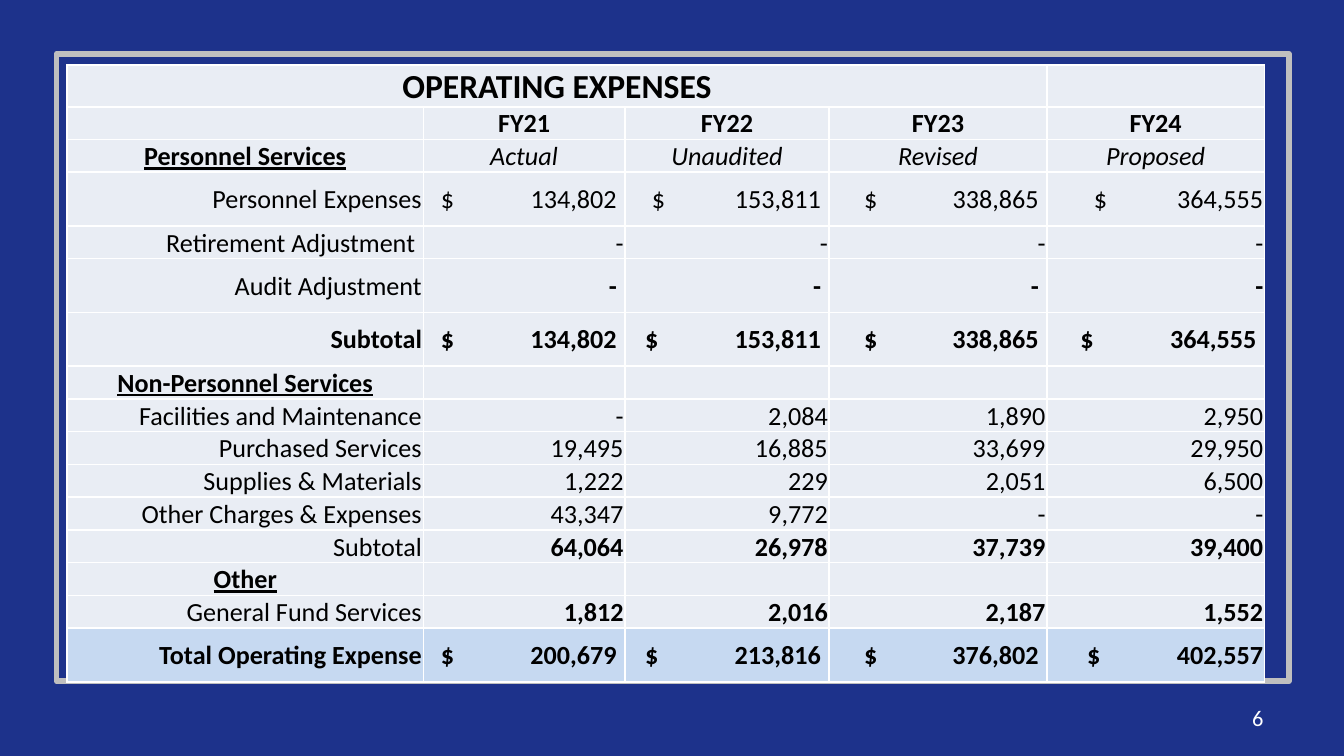
from lxml.etree import SubElement
from pptx import Presentation
from pptx.dml.color import RGBColor
from pptx.enum.shapes import MSO_SHAPE
from pptx.enum.text import MSO_ANCHOR, PP_ALIGN
from pptx.oxml.ns import qn
from pptx.util import Inches, Pt

COLORS = {"navy": "1D328B", "frame": "BFBFBF", "white": "FFFFFF",
          "black": "000000", "body": "E9EDF4", "total": "C6D9F1"}
FONT = "Calibri"
COLUMNS = [26.5, 15, 15.2, 16.2, 16.2]  # percent of the slide's width
HEADER, LOW, TALL = 5.51, 4.27, 7.11  # percent of the slide's height
EDGE, INSET = 0.01, 0.06  # gap in inches to the right of a figure

HEADING = {"bold": True, "underline": True, "align": PP_ALIGN.CENTER}
YEAR = {"bold": True, "align": PP_ALIGN.CENTER}
STATUS = {"italic": True, "align": PP_ALIGN.CENTER}
PLAIN, BOLD = {}, {"bold": True}
BLANK = [""] * 4
INSET_THREE = [INSET] * 3 + [EDGE]

# label, label format, figures, figure format, row height
ROWS = [
    ("OPERATING EXPENSES", {**YEAR, "size": 18}, BLANK, PLAIN, HEADER),
    ("", PLAIN, ["FY21", "FY22", "FY23", "FY24"], YEAR, LOW),
    ("Personnel Services", HEADING,
     ["Actual", "Unaudited", "Revised", "Proposed"], STATUS, LOW),
    ("Personnel Expenses", PLAIN,
     ["$\t134,802", "$\t153,811", "$\t338,865", "$\t364,555"], PLAIN, TALL),
    ("Retirement Adjustment", PLAIN, ["-"] * 4, PLAIN, LOW),
    ("Audit Adjustment", PLAIN, ["-"] * 4, BOLD, TALL),
    ("Subtotal", BOLD,
     ["$\t134,802", "$\t153,811", "$\t338,865", "$\t364,555"], BOLD, TALL),
    ("Non-Personnel Services", HEADING, BLANK, PLAIN, LOW),
    ("Facilities and Maintenance", PLAIN, ["-", "2,084", "1,890", "2,950"], PLAIN, LOW),
    ("Purchased Services", PLAIN, ["19,495", "16,885", "33,699", "29,950"], PLAIN, LOW),
    ("Supplies & Materials", PLAIN, ["1,222", "229", "2,051", "6,500"], PLAIN, LOW),
    ("Other Charges & Expenses", PLAIN, ["43,347", "9,772", "-", "-"], PLAIN, LOW),
    ("Subtotal", PLAIN, ["64,064", "26,978", "37,739", "39,400"], BOLD, LOW),
    ("Other", HEADING, BLANK, PLAIN, LOW),
    ("General Fund Services", PLAIN, ["1,812", "2,016", "2,187", "1,552"], BOLD, LOW),
    ("Total Operating Expense", BOLD,
     ["$\t200,679", "$\t213,816", "$\t376,802", "$\t402,557"], BOLD, TALL),
]
# Inches from the cell's left side to the dollar sign, by row label
DOLLAR_INDENTS = {"Personnel Expenses": [0.13, 0.2, 0.26, 0.35],
                  "Subtotal": [0.13, 0.15, 0.26, 0.25],
                  "Total Operating Expense": [0.13, 0.15, 0.26, 0.3]}
RIGHT_GAPS = {"Personnel Expenses": INSET_THREE, "Audit Adjustment": INSET_THREE,
              "Subtotal": [INSET] * 4, "Total Operating Expense": INSET_THREE}


def color(name):
    return RGBColor.from_string(COLORS[name])


def write(frame, text, size=14, ink="black", bold=False, italic=False,
          underline=False, align=PP_ALIGN.RIGHT, tab=None):
    """Fill the first paragraph; tab is the place of a right-aligned tab stop."""
    paragraph = frame.paragraphs[0]
    paragraph.alignment = align
    if tab:
        stops = SubElement(paragraph._p.get_or_add_pPr(), qn("a:tabLst"))
        SubElement(stops, qn("a:tab"), pos=str(int(tab)), algn="r")
    if text:
        run = paragraph.add_run()
        run.text = text
        font = run.font
        font.name, font.size = FONT, Pt(size)
        font.bold, font.italic, font.underline = bold, italic, underline
        font.color.rgb = color(ink)
    SubElement(paragraph._p, qn("a:endParaRPr"), sz=str(size * 100))


class Deck:
    def __init__(self):
        self.presentation = Presentation()
        self.width = self.presentation.slide_width = Inches(10)
        self.height = self.presentation.slide_height = Inches(5.625)
        self.slide = self.presentation.slides.add_slide(
            self.presentation.slide_layouts[6])
        background = self.slide.background.fill
        background.solid()
        background.fore_color.rgb = color("navy")

    def across(self, percent):
        return int(self.width * percent / 100)

    def down(self, percent):
        return int(self.height * percent / 100)

    def box(self, left, top, width, height):
        return (self.across(left), self.down(top),
                self.across(width), self.down(height))

    def frame(self, *place):
        border = self.slide.shapes.add_shape(MSO_SHAPE.RECTANGLE, *self.box(*place))
        border.shadow.inherit = False
        border.fill.background()
        border.line.color.rgb = color("frame")
        border.line.width = Pt(3)
        SubElement(border.line._get_or_add_ln(), qn("a:round"))

    def text(self, content, *place, **style):
        frame = self.slide.shapes.add_textbox(*self.box(*place)).text_frame
        frame.word_wrap = True
        frame.vertical_anchor = MSO_ANCHOR.MIDDLE
        write(frame, content, **style)

    def cell(self, cell, fill, left=EDGE, right=EDGE):
        """Set fill, margins and white borders of a table cell."""
        cell.vertical_anchor = MSO_ANCHOR.MIDDLE
        cell.margin_left, cell.margin_right = Inches(left), Inches(right)
        cell.margin_top, cell.margin_bottom = Inches(EDGE), 0
        properties = cell._tc.get_or_add_tcPr()
        for side in ("lnL", "lnR", "lnT", "lnB"):
            line = SubElement(properties, qn(f"a:{side}"), w=str(Pt(1)))
            paint = SubElement(line, qn("a:solidFill"))
            SubElement(paint, qn("a:srgbClr"), val=COLORS["white"])
        cell.fill.solid()
        cell.fill.fore_color.rgb = color(fill)

    def figure(self, cell, text, style, fill, width, indent, gap):
        """Write a figure, with a dollar sign before the tab held to the left."""
        if "\t" in text:
            self.cell(cell, fill, left=indent, right=0)
            style = {**style, "align": PP_ALIGN.LEFT,
                     "tab": width - Inches(indent + gap)}
        else:
            self.cell(cell, fill, right=gap)
        write(cell.text_frame, text, **style)

    def expenses(self, left, top):
        place = self.box(left, top, sum(COLUMNS), sum(row[-1] for row in ROWS))
        table = self.slide.shapes.add_table(len(ROWS), len(COLUMNS), *place).table
        table.first_row = table.horz_banding = False
        for column, share in zip(table.columns, COLUMNS):
            column.width = self.across(share)
        for r, (label, label_style, figures, style, height) in enumerate(ROWS):
            table.rows[r].height = self.down(height)
            fill = "total" if r == len(ROWS) - 1 else "body"
            label_gap = INSET if label == "Retirement Adjustment" else EDGE
            self.cell(table.cell(r, 0), fill, right=label_gap)
            write(table.cell(r, 0).text_frame, label, **label_style)
            indents = DOLLAR_INDENTS.get(label, [EDGE] * 4)
            has_gaps = label_style is BOLD or style is not BOLD or height == TALL
            gaps = RIGHT_GAPS.get(label) if has_gaps and height == TALL else None
            for c, (text, indent, gap) in enumerate(
                    zip(figures, indents, gaps or [EDGE] * 4), 1):
                self.figure(table.cell(r, c), text, style, fill,
                            table.columns[c].width, indent, gap)
        table.cell(0, 0).merge(table.cell(0, 3))


def main():
    deck = Deck()
    deck.frame(4.2, 7.11, 91.7, 83.02)
    deck.text("6", 71.7, 92.27, 23.3, 5.33, size=12, ink="white")
    deck.expenses(5, 8.6)
    deck.presentation.save("out.pptx")


if __name__ == "__main__":
    main()
